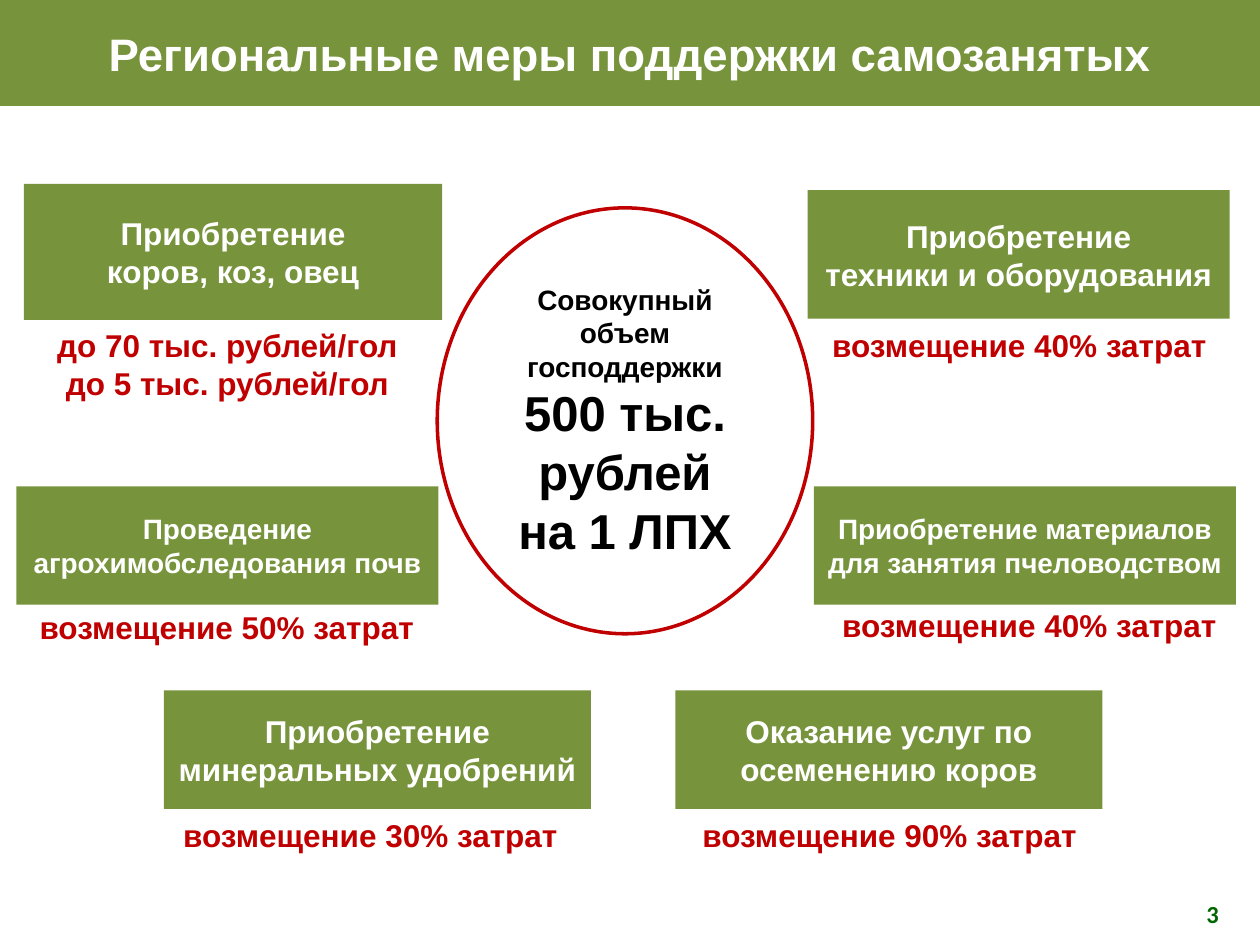
from dataclasses import dataclass

from pptx import Presentation
from pptx.dml.color import RGBColor
from pptx.enum.shapes import MSO_SHAPE
from pptx.enum.text import MSO_ANCHOR, MSO_AUTO_SIZE, PP_ALIGN
from pptx.util import Inches, Pt


@dataclass(frozen=True)
class Theme:
    green: RGBColor = RGBColor.from_string("77933C")
    red: RGBColor = RGBColor.from_string("C00000")
    white: RGBColor = RGBColor.from_string("FFFFFF")
    black: RGBColor = RGBColor.from_string("000000")
    number: RGBColor = RGBColor.from_string("006600")
    font: str = "Arial"
    number_font: str = "Calibri"
    title: int = 26
    total: int = 28
    body: int = 18
    small: int = 16
    page: int = 14


THEME = Theme()


def write(sp, text, sizes, color, font=THEME.font, anchor=MSO_ANCHOR.MIDDLE, wrap=True):
    tf = sp.text_frame
    tf.text = text
    tf.auto_size = MSO_AUTO_SIZE.NONE
    tf.word_wrap = wrap
    tf.vertical_anchor = anchor
    for p, size in zip(tf.paragraphs, sizes):
        p.alignment = PP_ALIGN.CENTER
        for r in p.runs:
            r.font.name = font
            r.font.size = Pt(size)
            r.font.bold = True
            r.font.color.rgb = color


def add_title(s, box, text):
    sp = s.shapes.title
    sp.left, sp.top, sp.width, sp.height = map(Inches, box)
    sp.fill.solid()
    sp.fill.fore_color.rgb = THEME.green
    write(sp, text, [THEME.title], THEME.white)


def add_label(s, box, text):
    sp = s.shapes.add_textbox(*map(Inches, box))
    sizes = [THEME.body] * len(text.split("\n"))
    write(sp, text, sizes, THEME.red, anchor=MSO_ANCHOR.TOP, wrap=False)


def add_measure(s, box, text, size, label_box, label):
    sp = s.shapes.add_shape(MSO_SHAPE.RECTANGLE, *map(Inches, box))
    sp.shadow.inherit = False
    sp.fill.solid()
    sp.fill.fore_color.rgb = THEME.green
    sp.line.fill.background()
    write(sp, text, [size] * len(text.split("\n")), THEME.white)
    add_label(s, label_box, label)


def add_total(s, box):
    sp = s.shapes.add_shape(MSO_SHAPE.OVAL, *map(Inches, box))
    sp.shadow.inherit = False
    sp.fill.solid()
    sp.fill.fore_color.rgb = THEME.white
    sp.line.color.rgb = THEME.red
    sp.line.width = Pt(2)
    text = "Совокупный объем господдержки\n500 тыс. рублей на 1 ЛПХ"
    write(sp, text, [THEME.small, THEME.total], THEME.black)


def add_page_number(s, box, text):
    sp = s.shapes.add_textbox(*map(Inches, box))
    tf = sp.text_frame
    tf.margin_left = tf.margin_right = tf.margin_top = tf.margin_bottom = 0
    write(sp, text, [THEME.page], THEME.number, font=THEME.number_font)


def main():
    prs = Presentation()
    prs.slide_width, prs.slide_height = Inches(10), Inches(7.5)
    s = prs.slides.add_slide(prs.slide_layouts[5])
    add_title(s, (0, 0, 10, 0.84), "Региональные меры поддержки самозанятых")
    add_total(s, (3.47, 1.65, 2.98, 3.38))
    measures = [
        ((0.19, 1.46, 3.32, 1.08), "Приобретение\nкоров, коз, овец", THEME.body,
         (0.34, 2.54, 2.93, 0.71), "до 70 тыс. рублей/гол\nдо 5 тыс. рублей/гол"),
        ((6.41, 1.51, 3.35, 1.02), "Приобретение\nтехники и оборудования", THEME.body,
         (6.45, 2.54, 3.28, 0.4), "возмещение 40% затрат"),
        ((0.13, 3.86, 3.35, 0.94), "Проведение\nагрохимобследования почв", THEME.small,
         (0.16, 4.78, 3.28, 0.4), "возмещение 50% затрат"),
        ((6.46, 3.86, 3.35, 0.94), "Приобретение материалов для занятия пчеловодством",
         THEME.small, (6.53, 4.76, 3.28, 0.4), "возмещение 40% затрат"),
        ((1.3, 5.48, 3.39, 0.94), "Приобретение минеральных удобрений", THEME.body,
         (1.3, 6.43, 3.28, 0.4), "возмещение 30% затрат"),
        ((5.36, 5.48, 3.39, 0.94), "Оказание услуг по осеменению коров", THEME.body,
         (5.42, 6.43, 3.28, 0.4), "возмещение 90% затрат"),
    ]
    for measure in measures:
        add_measure(s, *measure)
    add_page_number(s, (9.36, 7.17, 0.53, 0.16), "3")
    prs.save("out.pptx")


if __name__ == "__main__":
    main()
